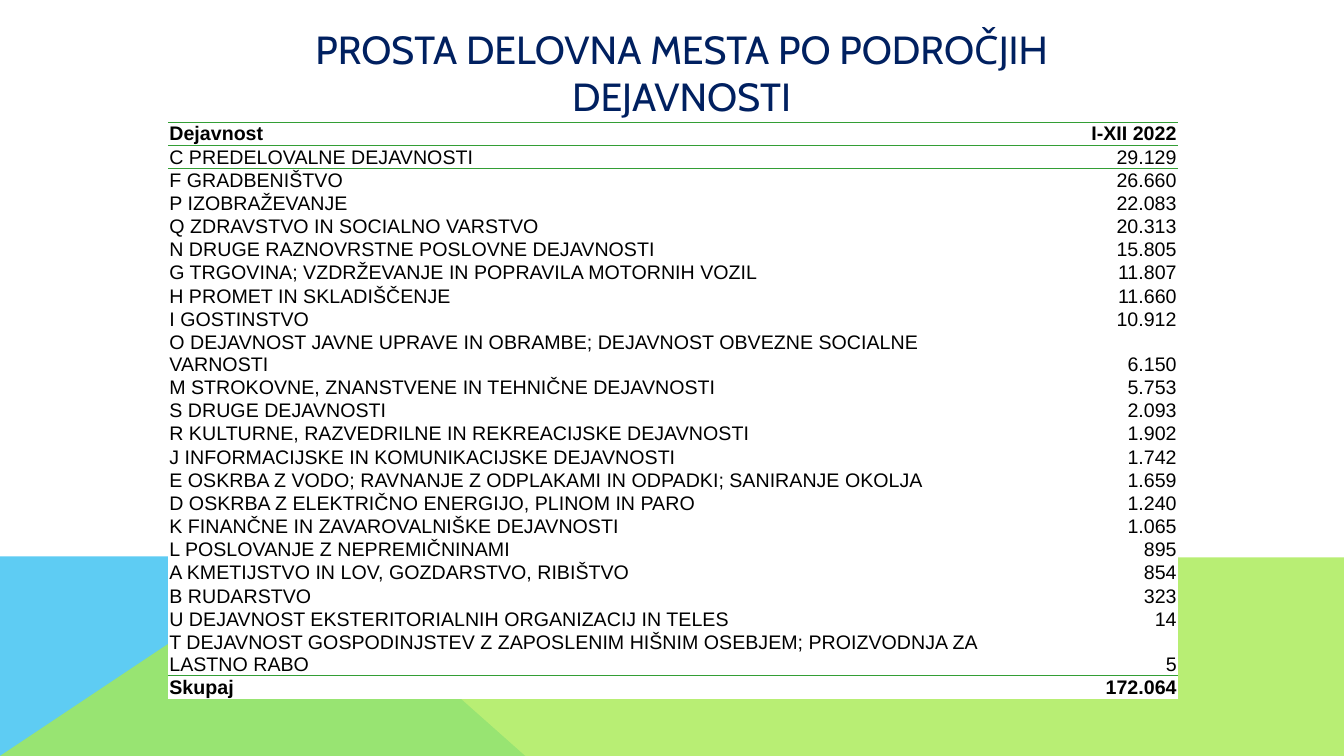
from pptx import Presentation
from pptx.dml.color import RGBColor
from pptx.enum.text import MSO_ANCHOR as ANCHOR, MSO_AUTO_SIZE as AUTO, PP_ALIGN as ALIGN
from pptx.oxml.ns import qn
from pptx.util import Pt
from lxml.etree import SubElement

PX = 9144
NAVY = RGBColor(0x00, 0x20, 0x60)
BLUE = RGBColor(0x5E, 0xCC, 0xF3)
LIME = RGBColor(0xA7, 0xEA, 0x52)
GREEN = RGBColor(0x33, 0x9E, 0x35)
BLACK = RGBColor(0x00, 0x00, 0x00)
WHITE = RGBColor(0xFF, 0xFF, 0xFF)
NO_GRID = "{2D5ABB26-0587-4C30-8999-92F81FD0307C}"
ROW_H, TALL_ROW_H = 23, 44
ONE_LINE_CHARS = 70

HEADER = ("Dejavnost", "I-XII 2022")
VACANCIES = [
    ("C PREDELOVALNE DEJAVNOSTI", "29.129"),
    ("F GRADBENIŠTVO", "26.660"),
    ("P IZOBRAŽEVANJE", "22.083"),
    ("Q ZDRAVSTVO IN SOCIALNO VARSTVO", "20.313"),
    ("N DRUGE RAZNOVRSTNE POSLOVNE DEJAVNOSTI", "15.805"),
    ("G TRGOVINA; VZDRŽEVANJE IN POPRAVILA MOTORNIH VOZIL", "11.807"),
    ("H PROMET IN SKLADIŠČENJE", "11.660"),
    ("I GOSTINSTVO", "10.912"),
    ("O DEJAVNOST JAVNE UPRAVE IN OBRAMBE; DEJAVNOST OBVEZNE SOCIALNE VARNOSTI", "6.150"),
    ("M STROKOVNE, ZNANSTVENE IN TEHNIČNE DEJAVNOSTI", "5.753"),
    ("S DRUGE DEJAVNOSTI", "2.093"),
    ("R KULTURNE, RAZVEDRILNE IN REKREACIJSKE DEJAVNOSTI", "1.902"),
    ("J INFORMACIJSKE IN KOMUNIKACIJSKE DEJAVNOSTI", "1.742"),
    ("E OSKRBA Z VODO; RAVNANJE Z ODPLAKAMI IN ODPADKI; SANIRANJE OKOLJA", "1.659"),
    ("D OSKRBA Z ELEKTRIČNO ENERGIJO, PLINOM IN PARO", "1.240"),
    ("K FINANČNE IN ZAVAROVALNIŠKE DEJAVNOSTI", "1.065"),
    ("L POSLOVANJE Z NEPREMIČNINAMI", "895"),
    ("A KMETIJSTVO IN LOV, GOZDARSTVO, RIBIŠTVO", "854"),
    ("B RUDARSTVO", "323"),
    ("U DEJAVNOST EKSTERITORIALNIH ORGANIZACIJ IN TELES", "14"),
    ("T DEJAVNOST GOSPODINJSTEV Z ZAPOSLENIM HIŠNIM OSEBJEM; PROIZVODNJA ZA LASTNO RABO", "5"),
]
TOTAL = ("Skupaj", "172.064")


def add_run(p, text, font, size, color, bold=False):
    r = p.add_run()
    r.text = text
    r.font.name = font
    r.font.size = Pt(size)
    r.font.color.rgb = color
    r.font.bold = bold


def add_polygon(s, points, color, opacity=100):
    builder = s.shapes.build_freeform(*points[0], scale=PX)
    builder.add_line_segments(points[1:])
    sp = builder.convert_to_shape()
    sp.shadow.inherit = False
    sp.fill.solid()
    sp.fill.fore_color.rgb = color
    sp.line.fill.background()
    if opacity < 100:
        clr = sp.fill._xPr.find(qn("a:solidFill"))[0]
        SubElement(clr, qn("a:alpha")).set("val", str(opacity * 1000))


def set_title(s, text, x, y, w, h):
    sp = s.shapes.title
    sp.left, sp.top, sp.width, sp.height = (v * PX for v in (x, y, w, h))
    tf = sp.text_frame
    tf.word_wrap = True
    tf.auto_size = AUTO.NONE
    tf.vertical_anchor = ANCHOR.MIDDLE
    p = tf.paragraphs[0]
    p.alignment = ALIGN.CENTER
    add_run(p, text, "Cabin", 28, NAVY)


def add_borders(cell, sides):
    tc_pr = cell._tc.get_or_add_tcPr()
    for i, side in enumerate(sides):
        ln = SubElement(tc_pr, qn(f"a:ln{side}"), w=str(Pt(0.5)))
        fill = SubElement(ln, qn("a:solidFill"))
        SubElement(fill, qn("a:srgbClr"), val=str(GREEN))
        tc_pr.insert(i, ln)


def fill_cell(cell, text, align, bold, sides):
    cell.margin_left = cell.margin_top = cell.margin_right = PX
    cell.margin_bottom = 0
    cell.vertical_anchor = ANCHOR.BOTTOM
    cell.fill.solid()
    cell.fill.fore_color.rgb = WHITE
    p = cell.text_frame.paragraphs[0]
    p.alignment = align
    add_run(p, text, "Arial", 14, BLACK, bold)
    add_borders(cell, sides)


def add_vacancy_table(s, x, y, widths):
    rows = [HEADER, *VACANCIES, TOTAL]
    last = len(rows) - 1
    borders = {0: "TB", 1: "T", last - 1: "B", last: "T"}
    heights = [TALL_ROW_H if len(name) > ONE_LINE_CHARS else ROW_H for name, _ in rows]
    frame = s.shapes.add_table(len(rows), len(widths), x * PX, y * PX,
                               sum(widths) * PX, sum(heights) * PX)
    table = frame.table
    table.first_row = table.horz_banding = False
    table._tbl.tblPr.find(qn("a:tableStyleId")).text = NO_GRID
    for col, width in zip(table.columns, widths):
        col.width = width * PX
    for i, (row, height) in enumerate(zip(rows, heights)):
        table.rows[i].height = height * PX
        for j, (text, align) in enumerate(zip(row, (ALIGN.LEFT, ALIGN.RIGHT))):
            fill_cell(table.cell(i, j), text, align, i in (0, last), borders.get(i, ""))


def main():
    prs = Presentation()
    prs.slide_width, prs.slide_height = 1333 * PX, 750 * PX
    s = prs.slides.add_slide(prs.slide_layouts[5])
    add_polygon(s, [(0, 750), (0, 552), (298, 552), (521, 750)], BLUE)
    add_polygon(s, [(0, 750), (297, 552), (1333, 553), (1333, 750)], LIME, 80)
    set_title(s, "PROSTA DELOVNA MESTA PO PODROČJIH DEJAVNOSTI", 208, 29, 936, 85)
    add_vacancy_table(s, 167, 121, (836, 165))
    prs.save("out.pptx")


if __name__ == "__main__":
    main()
